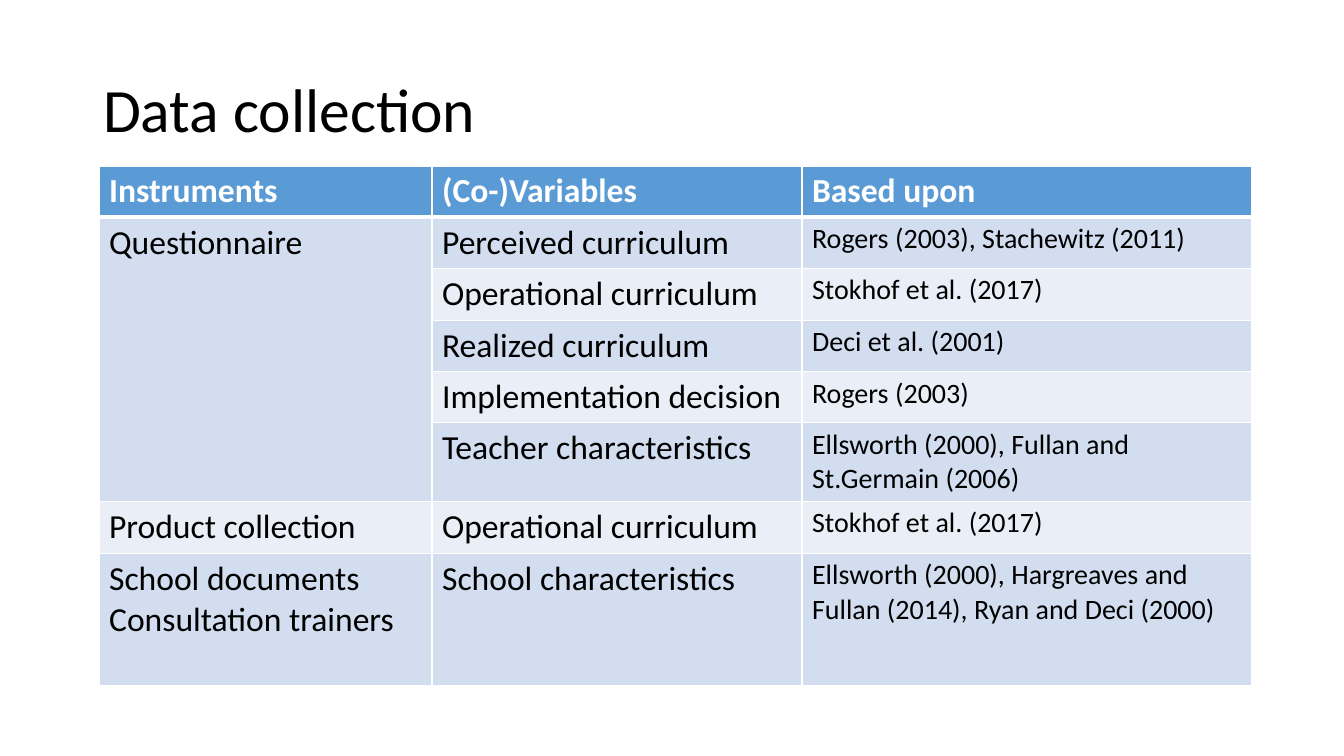
"""Build the data collection slide with its table of instruments."""
from lxml import etree
from pptx import Presentation
from pptx import util as u
from pptx.dml.color import RGBColor
from pptx.enum import text
from pptx.oxml.ns import qn

PX = 914400 / 100.8
THEME = {
    "font": "Calibri", "title": 44, "body": 24, "source": 20,
    "ink": "000000", "paper": "FFFFFF", "header": "5B9BD5",
    "bands": ["EAEFF7", "D2DEEF"],
}
COLUMNS = [333, 370, 450]
HEIGHTS = [51, 51, 52, 51, 51, 78, 52, 132]
ROWS = [
    ["Instruments", "(Co-)Variables", "Based upon"],
    ["Questionnaire", "Perceived curriculum", "Rogers (2003), Stachewitz (2011)"],
    ["", "Operational curriculum", "Stokhof et al. (2017)"],
    ["", "Realized curriculum", "Deci et al. (2001)"],
    ["", "Implementation decision", "Rogers (2003)"],
    ["", "Teacher characteristics", "Ellsworth (2000), Fullan and St.Germain (2006)"],
    ["Product collection", "Operational curriculum", "Stokhof et al. (2017)"],
    ["School documents\nConsultation trainers", "School characteristics",
     "Ellsworth (2000), Hargreaves and Fullan (2014), Ryan and Deci (2000)"],
]


def px(*lengths):
    return [u.Emu(round(n * PX)) for n in lengths]


def write(tf, words, size, color, bold=False):
    tf.text = words
    for p in tf.paragraphs:
        for r in p.runs:
            fmt = {"name": THEME["font"], "size": u.Pt(size), "bold": bold}
            for key, value in fmt.items():
                setattr(r.font, key, value)
            r.font.color.rgb = RGBColor.from_string(color)


prs = Presentation()
prs.slide_width, prs.slide_height = px(1344, 756)
s = prs.slides.add_slide(prs.slide_layouts[5])

title = s.shapes.title
title.left, title.top, title.width, title.height = px(93, 40, 1159, 146)
tf = title.text_frame
write(tf, "Data collection", THEME["title"], THEME["ink"])
tf.auto_size = text.MSO_AUTO_SIZE.NONE
tf.vertical_anchor = text.MSO_ANCHOR.MIDDLE
tf.paragraphs[0].alignment = text.PP_ALIGN.LEFT
tf.paragraphs[0].line_spacing = 0.9

frame = px(99, 166, sum(COLUMNS), sum(HEIGHTS))
table = s.shapes.add_table(len(ROWS), len(COLUMNS), *frame).table
for column, width in zip(table.columns, px(*COLUMNS)):
    column.width = width
for row, height in zip(table.rows, px(*HEIGHTS)):
    row.height = height
table.cell(1, 0).merge(table.cell(5, 0))

for i, row in enumerate(ROWS):
    head = i == 0
    fill = THEME["header"] if head else THEME["bands"][i % 2]
    color = THEME["paper"] if head else THEME["ink"]
    edges = {"L": 1, "R": 1, "T": 3 if i == 1 else 1, "B": 3 if head else 1}
    for j, words in enumerate(row):
        cell = table.cell(i, j)
        size = THEME["source"] if j == 2 and not head else THEME["body"]
        if not cell.is_spanned:
            write(cell.text_frame, words, size, color, head)
        tc_pr = cell._tc.get_or_add_tcPr()
        for side, points in edges.items():
            ln = etree.SubElement(tc_pr, qn(f"a:ln{side}"), w=str(u.Pt(points)))
            solid = etree.SubElement(ln, qn("a:solidFill"))
            etree.SubElement(solid, qn("a:srgbClr"), val=THEME["paper"])
        cell.fill.solid()
        cell.fill.fore_color.rgb = RGBColor.from_string(fill)

prs.save("out.pptx")
